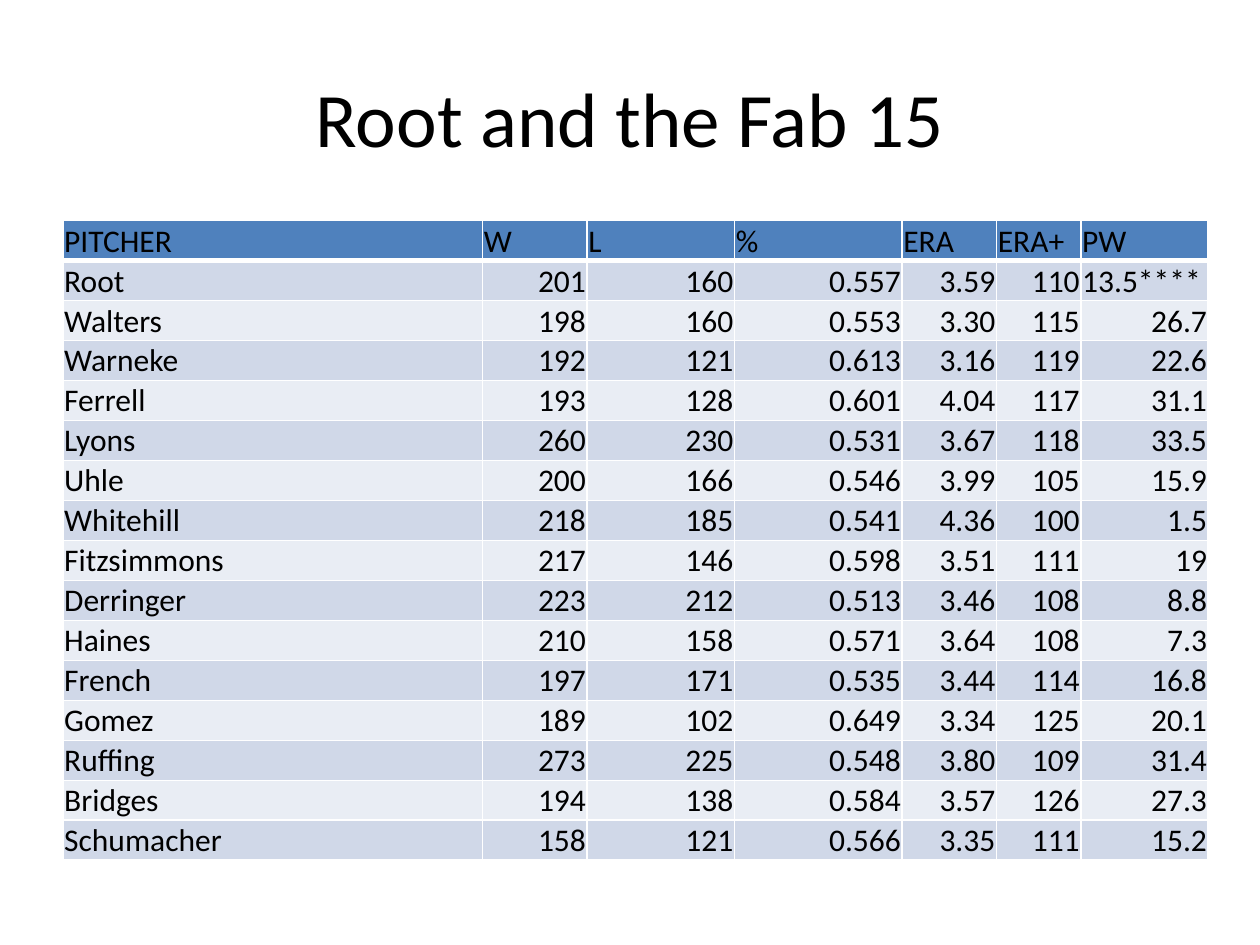
from lxml.etree import SubElement as Sub
from pptx import Presentation
from pptx.dml.color import RGBColor
from pptx.enum.text import MSO_ANCHOR as Anchor, PP_ALIGN as Align
from pptx.oxml.ns import qn
from pptx.util import Inches, Pt

TITLE = "Root and the Fab 15"
HEADS = ("PITCHER", "W", "L", "%", "ERA", "ERA+", "PW")
STATS = [
    ("Root", "201", "160", "0.557", "3.59", "110", "13.5****"),
    ("Walters", "198", "160", "0.553", "3.30", "115", "26.7"),
    ("Warneke", "192", "121", "0.613", "3.16", "119", "22.6"),
    ("Ferrell", "193", "128", "0.601", "4.04", "117", "31.1"),
    ("Lyons", "260", "230", "0.531", "3.67", "118", "33.5"),
    ("Uhle", "200", "166", "0.546", "3.99", "105", "15.9"),
    ("Whitehill", "218", "185", "0.541", "4.36", "100", "1.5"),
    ("Fitzsimmons", "217", "146", "0.598", "3.51", "111", "19"),
    ("Derringer", "223", "212", "0.513", "3.46", "108", "8.8"),
    ("Haines", "210", "158", "0.571", "3.64", "108", "7.3"),
    ("French", "197", "171", "0.535", "3.44", "114", "16.8"),
    ("Gomez", "189", "102", "0.649", "3.34", "125", "20.1"),
    ("Ruffing", "273", "225", "0.548", "3.80", "109", "31.4"),
    ("Bridges", "194", "138", "0.584", "3.57", "126", "27.3"),
    ("Schumacher", "158", "121", "0.566", "3.35", "111", "15.2"),
]
WIDTHS = (3.33, 0.83, 1.17, 1.33, 0.75, 0.67, 1.01)
FONT = "Calibri"
BLACK = RGBColor(0x00, 0x00, 0x00)
WHITE = RGBColor(0xFF, 0xFF, 0xFF)
BLUE = RGBColor(0x4F, 0x81, 0xBD)
BANDS = (RGBColor(0xE9, 0xED, 0xF4), RGBColor(0xD0, 0xD8, 0xE8))


def style(frame, size, align):
    par = frame.paragraphs[0]
    par.alignment = align
    font = par.runs[0].font
    font.name, font.size, font.bold = FONT, Pt(size), False
    font.color.rgb = BLACK


def border(cell, row):
    props = cell._tc.get_or_add_tcPr()
    points = {"lnL": 1, "lnR": 1, "lnT": 3 if row == 1 else 1, "lnB": 3 if row == 0 else 1}
    for side, width in points.items():
        line = Sub(props, qn(f"a:{side}"), w=str(Pt(width)))
        Sub(Sub(line, qn("a:solidFill")), qn("a:srgbClr"), val=str(WHITE))


def fill_cell(cell, text, row):
    cell.margin_left = cell.margin_right = cell.margin_top = Inches(0.01)
    cell.margin_bottom = 0
    cell.vertical_anchor = Anchor.BOTTOM
    border(cell, row)
    cell.fill.solid()
    cell.fill.fore_color.rgb = BANDS[row % 2] if row else BLUE
    cell.text_frame.text = text
    number = text.replace(".", "").isdigit()
    style(cell.text_frame, 18, Align.RIGHT if number else Align.LEFT)


def main():
    deck = Presentation()
    deck.slide_width, deck.slide_height = Inches(10), Inches(7.5)
    slide = deck.slides.add_slide(deck.slide_layouts[6])

    title = slide.shapes.add_textbox(Inches(0.5), Inches(0.3), Inches(9), Inches(1.25))
    frame = title.text_frame
    frame.word_wrap = True
    frame.vertical_anchor = Anchor.MIDDLE
    frame.text = TITLE
    style(frame, 44, Align.CENTER)

    rows = [HEADS] + STATS
    high = Inches(5.08)
    table = slide.shapes.add_table(
        len(rows), len(HEADS), Inches(0.5), Inches(1.75), Inches(sum(WIDTHS)), high
    ).table
    for col, width in zip(table.columns, WIDTHS):
        col.width = Inches(width)
    for row, texts in enumerate(rows):
        table.rows[row].height = high // len(rows)
        for col, text in enumerate(texts):
            fill_cell(table.cell(row, col), text, row)

    deck.save("out.pptx")


if __name__ == "__main__":
    main()
